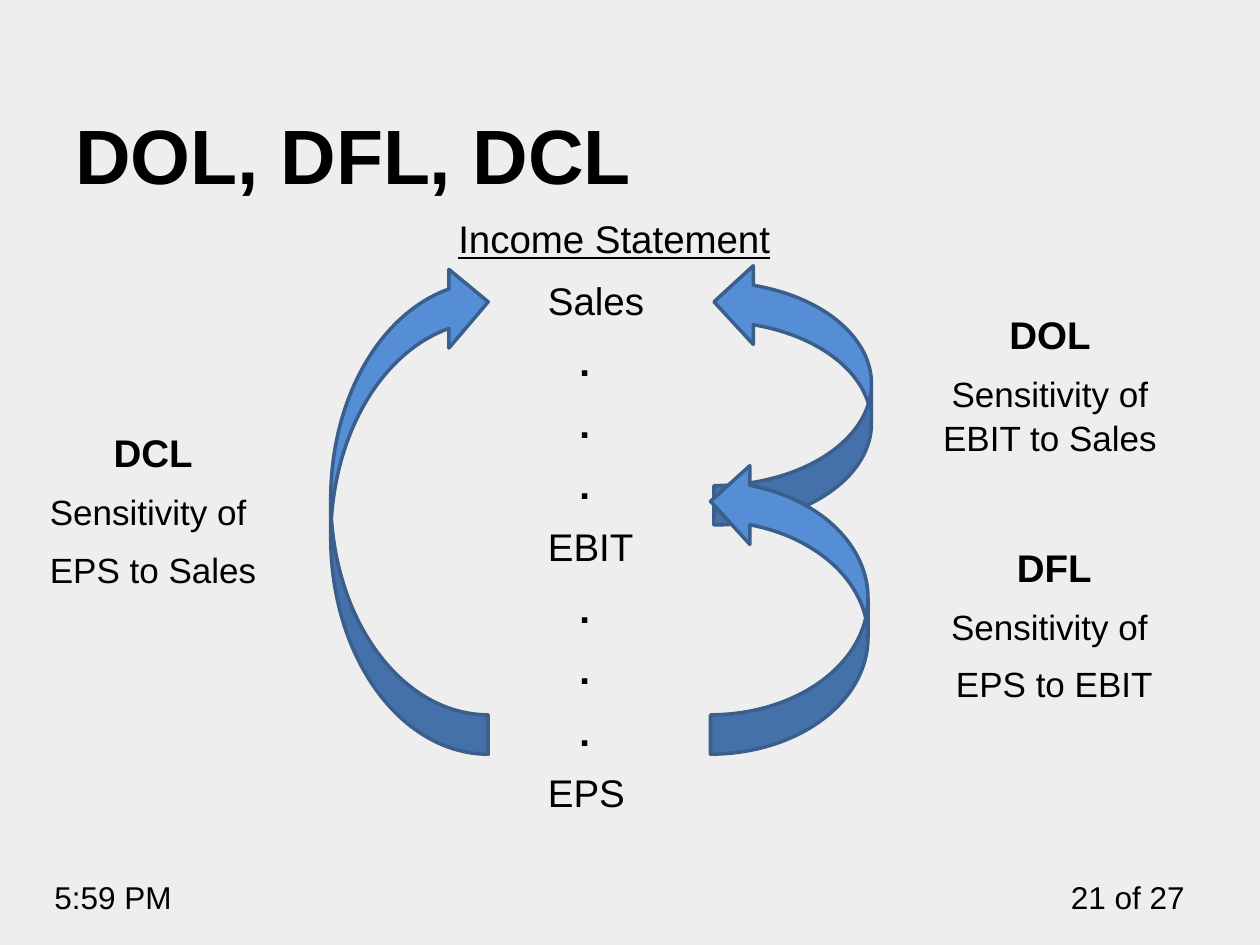
import pptx
import pptx.dml.color
import pptx.enum.shapes
import pptx.enum.text
import pptx.util
from lxml import etree
from pptx.oxml.ns import qn

Pt = pptx.util.Pt
ALIGN = pptx.enum.text.PP_ALIGN
ANCHOR = pptx.enum.text.MSO_ANCHOR


def rgb(hex_color):
    return pptx.dml.color.RGBColor.from_string(hex_color)


class LeverageSlide:
    FONT = "Arial"
    INK = "000000"
    PAPER = "EEEEEE"
    ARROW_FILL = "558ED5"
    ARROW_LINE = "3A5F8C"
    LINE_SPACING = 1.05
    GAP = 7.5

    def __init__(self, presentation):
        self.slide = presentation.slides.add_slide(presentation.slide_layouts[6])
        background = self.slide.background.fill
        background.solid()
        background.fore_color.rgb = rgb(self.PAPER)

    def frame(self, left, top, width, height, anchor=ANCHOR.TOP):
        box = self.slide.shapes.add_textbox(Pt(left), Pt(top), Pt(width), Pt(height))
        box.text_frame.word_wrap = True
        box.text_frame.vertical_anchor = anchor
        return box.text_frame

    def style(self, paragraph, size, bold=False, align=ALIGN.LEFT, underline=False):
        paragraph.alignment = align
        for run in paragraph.runs:
            run.font.name = self.FONT
            run.font.size = Pt(size)
            run.font.bold = bold
            run.font.underline = underline
            run.font.color.rgb = rgb(self.INK)

    def space(self, text_frame):
        for index, paragraph in enumerate(text_frame.paragraphs):
            paragraph.line_spacing = self.LINE_SPACING
            paragraph.space_before = Pt(self.GAP if index else 0)

    def label(self, text, left, top, width, height, size,
              bold=False, align=ALIGN.LEFT, anchor=ANCHOR.TOP):
        text_frame = self.frame(left, top, width, height, anchor)
        text_frame.text = text
        self.style(text_frame.paragraphs[0], size, bold, align)

    def statement(self, heading, items, left, top, width, height):
        """Underlined heading over a tabbed column; dots sit on a deeper tab stop."""
        text_frame = self.frame(left, top, width, height)
        text_frame.text = "\n".join([heading] + ["\t" + item for item in items])
        head, *rows = text_frame.paragraphs
        self.style(head, 22, align=ALIGN.CENTER, underline=True)
        for item, row in zip(items, rows):
            is_dot = item == "."
            tabs = etree.SubElement(row._p.get_or_add_pPr(), qn("a:tabLst"))
            stop = Pt(90 if is_dot else 72)
            etree.SubElement(tabs, qn("a:tab"), pos=str(stop), algn="l")
            self.style(row, 22, bold=is_dot)
        self.space(text_frame)

    def measure(self, name, meaning, left, top):
        """Bold measure name with its meaning centred below."""
        text_frame = self.frame(left, top, 174, 96)
        text_frame.text = "\n".join([name] + meaning)
        head, *lines = text_frame.paragraphs
        self.style(head, 22, bold=True, align=ALIGN.CENTER)
        for line in lines:
            self.style(line, 20, align=ALIGN.CENTER)
        self.space(text_frame)

    def arrow(self, left, top, height, mirrored=False):
        """Curved arrow rising from the lower line item to the upper one."""
        arrow = self.slide.shapes.add_shape(
            pptx.enum.shapes.MSO_SHAPE.CURVED_LEFT_ARROW,
            Pt(left), Pt(top), Pt(90), Pt(height))
        arrow.shadow.inherit = False
        arrow.fill.solid()
        arrow.fill.fore_color.rgb = rgb(self.ARROW_FILL)
        arrow.line.color.rgb = rgb(self.ARROW_LINE)
        arrow.line.width = Pt(2)
        transform = arrow._element.spPr.find(qn("a:xfrm"))
        transform.set("flipV", "1")
        if mirrored:
            transform.set("flipH", "1")


def main():
    presentation = pptx.Presentation()
    presentation.slide_width = Pt(720)
    presentation.slide_height = Pt(540)
    page = LeverageSlide(presentation)

    page.label("21 of 27", 600, 498, 84, 29, 18, align=ALIGN.RIGHT)
    page.label("5:59 PM", 24, 498, 114, 29, 18)
    page.label("DOL, DFL, DCL", 36, 28, 648, 90, 44, bold=True, anchor=ANCHOR.BOTTOM)

    dots = ["."] * 3
    page.statement("Income Statement", ["Sales", *dots, "EBIT", *dots, "EPS"],
                   234, 118, 234, 332)

    page.arrow(189, 150, 281, mirrored=True)
    page.arrow(408, 150, 150)
    page.arrow(406, 264, 167)

    page.measure("DOL", ["Sensitivity of EBIT to Sales"], 513, 173)
    page.measure("DFL", ["Sensitivity of ", "EPS to EBIT"], 515.5, 306)
    page.measure("DCL", ["Sensitivity of ", "EPS to Sales"], 0.5, 240.5)

    presentation.save("out.pptx")


if __name__ == "__main__":
    main()
